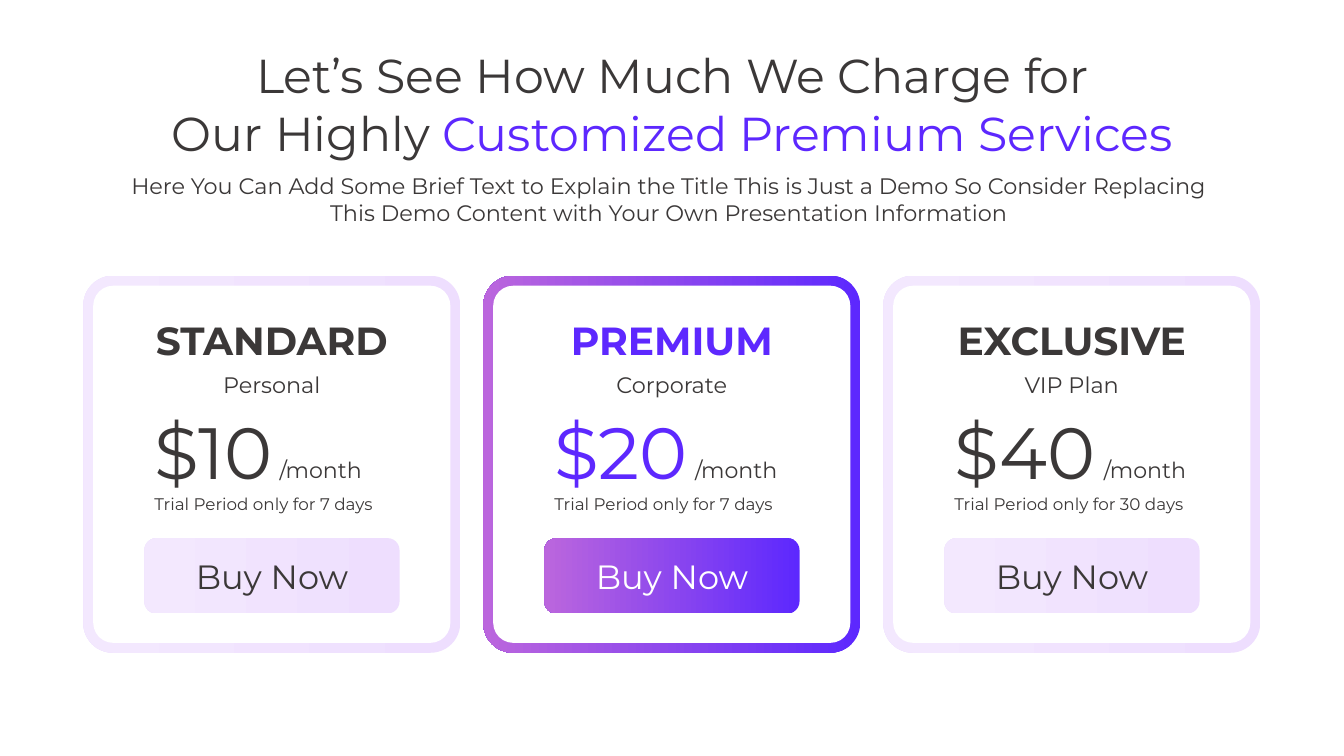
from pptx import Presentation
from pptx.dml.color import RGBColor
from pptx.enum.shapes import MSO_SHAPE
from pptx.enum.text import MSO_ANCHOR, MSO_AUTO_SIZE, PP_ALIGN
from pptx.util import Cm, Pt

ROUNDED = MSO_SHAPE.ROUNDED_RECTANGLE
TOP, MIDDLE = MSO_ANCHOR.TOP, MSO_ANCHOR.MIDDLE
NO_AUTO_SIZE = MSO_AUTO_SIZE.NONE
LEFT, CENTER = PP_ALIGN.LEFT, PP_ALIGN.CENTER

FONT = "Montserrat"
DARK = ["3B3838"]
WHITE = ["FFFFFF"]
VIVID = ["5D28FE", "BB66DD"]
PALE = ["EEDEFE", "F3E8FE"]


def paint(fill, colors):
    if len(colors) == 1:
        fill.solid()
        fill.fore_color.rgb = RGBColor.from_string(colors[0])
    else:
        fill.gradient()
        fill.gradient_angle = 180
        for stop, color in zip(fill.gradient_stops, colors):
            stop.color.rgb = RGBColor.from_string(color)


def write(shape, lines, size, alignment=CENTER, anchor=TOP, bold=False):
    frame = shape.text_frame
    frame.word_wrap = True
    frame.auto_size = NO_AUTO_SIZE
    frame.vertical_anchor = anchor
    for index, line in enumerate(lines):
        paragraph = frame.add_paragraph() if index else frame.paragraphs[0]
        paragraph.alignment = alignment
        for text, colors in line:
            run = paragraph.add_run()
            run.text = text
            run.font.name = FONT
            run.font.size = Pt(size)
            run.font.bold = bold
            paint(run.font.fill, colors)


presentation = Presentation()
presentation.slide_width = Cm(33.87)
presentation.slide_height = Cm(19.05)
slide = presentation.slides.add_slide(presentation.slide_layouts[5])
shapes = slide.shapes

title = shapes.title
title.left, title.top, title.width, title.height = Cm(3.18), Cm(1.04), Cm(27.53), Cm(3.18)
write(title, [
    [("Let’s See How Much We Charge for", DARK)],
    [("Our Highly ", DARK), ("Customized Premium Services", VIVID)],
], 34)

subtitle = shapes.add_textbox(Cm(2.7), Cm(4.22), Cm(28.32), Cm(1.63))
write(subtitle, [
    [("Here You Can Add Some Brief Text to Explain the Title This is Just a Demo So Consider Replacing", DARK)],
    [("This Demo Content with Your Own Presentation Information", DARK)],
], 16)

CARD_LEFT, CARD_TOP, CARD_SIZE, CARD_PITCH = 2.1, 6.95, 9.5, 10.08
BORDER, INDENT = 0.25, 1.54
plans = [
    ("STANDARD", "Personal", "$10", 4.7, "Trial Period only for 7 days", DARK, PALE, DARK),
    ("PREMIUM", "Corporate", "$20", 5.09, "Trial Period only for 7 days", VIVID, VIVID, WHITE),
    ("EXCLUSIVE", "VIP Plan", "$40", 5.31, "Trial Period only for 30 days", DARK, PALE, DARK),
]

for column, plan in enumerate(plans):
    name, audience, price, month_offset, trial, accent, card_colors, button_color = plan
    left = CARD_LEFT + column * CARD_PITCH
    content_left = left + INDENT
    panels = [
        (ROUNDED, left, CARD_TOP, CARD_SIZE, CARD_SIZE, 0.079, card_colors),
        (ROUNDED, left + BORDER, CARD_TOP + BORDER,
         CARD_SIZE - 2 * BORDER, CARD_SIZE - 2 * BORDER, 0.056, WHITE),
        (ROUNDED, content_left, 13.56, 6.43, 1.9, 0.16, card_colors),
    ]
    for kind, x, y, width, height, rounding, colors in panels:
        panel = shapes.add_shape(kind, Cm(x), Cm(y), Cm(width), Cm(height))
        panel.adjustments[0] = rounding
        panel.shadow.inherit = False
        panel.line.fill.background()
        paint(panel.fill, colors)
    write(panel, [[("Buy Now", button_color)]], 24, anchor=MIDDLE)

    labels = [
        (name, left, 7.85, CARD_SIZE, 1.45, 28, accent, CENTER, True),
        (audience, left, 9.22, CARD_SIZE, 0.94, 16, DARK, CENTER, False),
        (price, content_left, 10.13, 4.4, 2.46, 51.8, accent, LEFT, False),
        ("/month", left + month_offset, 11.38, 3, 0.94, 15.8, DARK, LEFT, False),
        (trial, content_left, 12.32, 7, 0.76, 12, DARK, LEFT, False),
    ]
    for text, x, y, width, height, size, colors, alignment, bold in labels:
        label = shapes.add_textbox(Cm(x), Cm(y), Cm(width), Cm(height))
        write(label, [[(text, colors)]], size, alignment, bold=bold)

presentation.save("out.pptx")
